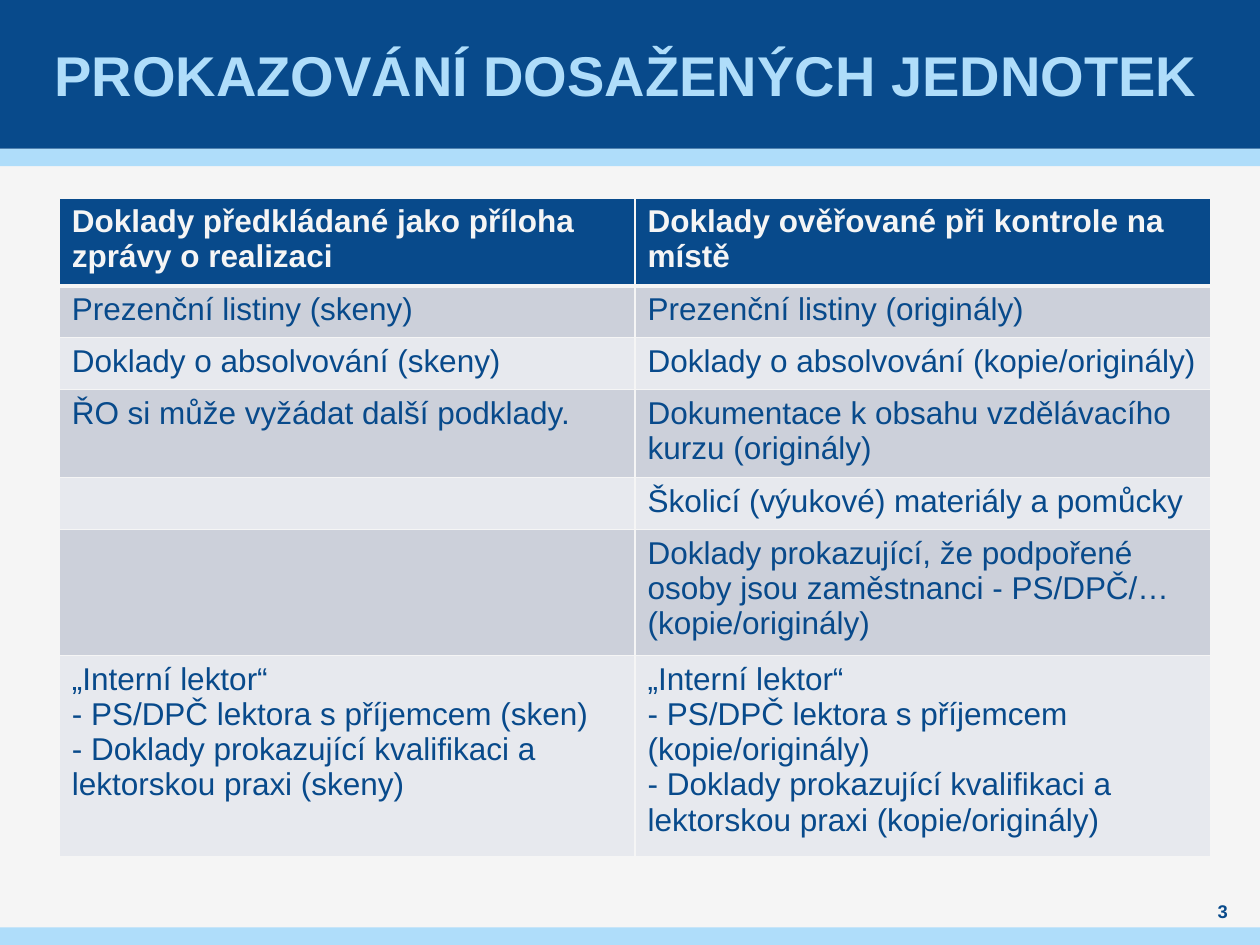
from lxml.etree import SubElement
from pptx import Presentation
from pptx.dml.color import RGBColor
from pptx.enum.shapes import MSO_SHAPE
from pptx.enum.text import MSO_ANCHOR, PP_ALIGN
from pptx.oxml.ns import qn
from pptx.util import Inches, Pt

NAVY = RGBColor(0x08, 0x4A, 0x8B)
SKY = RGBColor(0xAF, 0xDD, 0xFA)
PAPER = RGBColor(0xF5, 0xF5, 0xF5)
BANDS = [RGBColor(0xE7, 0xE9, 0xEE), RGBColor(0xCC, 0xD0, 0xDA)]
FONT = "Arial"

TITLE = "PROKAZOVÁNÍ DOSAŽENÝCH JEDNOTEK"
PAGE = "3"
ROWS = [
    ("Doklady předkládané jako příloha zprávy o realizaci",
     "Doklady ověřované při kontrole na místě"),
    ("Prezenční listiny (skeny)", "Prezenční listiny (originály)"),
    ("Doklady o absolvování (skeny)", "Doklady o absolvování (kopie/originály)"),
    ("ŘO si může vyžádat další podklady.",
     "Dokumentace k obsahu vzdělávacího kurzu (originály)"),
    ("", "Školicí (výukové) materiály a pomůcky"),
    ("", "Doklady prokazující, že podpořené osoby jsou zaměstnanci - PS/DPČ/…\n"
         "(kopie/originály)"),
    ("„Interní lektor“\n"
     "- PS/DPČ lektora s příjemcem (sken)\n"
     "- Doklady prokazující kvalifikaci a lektorskou praxi (skeny)",
     "„Interní lektor“\n"
     "- PS/DPČ lektora s příjemcem (kopie/originály)\n"
     "- Doklady prokazující kvalifikaci a lektorskou praxi (kopie/originály)"),
]
BARS = [(1.18, 0.14, SKY), (0, 1.18, NAVY), (7.36, 0.14, SKY)]
COL_W, ROW_H = 4.57, 0.41


def style_text(tf, size, color, bold):
    for p in tf.paragraphs:
        for r in p.runs:
            r.font.name = FONT
            r.font.size = Pt(size)
            r.font.bold = bold
            r.font.color.rgb = color


def add_text(s, box, text, size, color, align, inset=0):
    tf = s.shapes.add_textbox(*map(Inches, box)).text_frame
    tf.word_wrap = True
    tf.vertical_anchor = MSO_ANCHOR.MIDDLE
    tf.margin_left = tf.margin_right = Inches(inset)
    tf.margin_top = tf.margin_bottom = 0
    tf.text = text
    tf.paragraphs[0].alignment = align
    style_text(tf, size, color, True)


def add_borders(cell, top, bottom):
    tcPr = cell._tc.get_or_add_tcPr()
    for side, width in (("L", 1), ("R", 1), ("T", top), ("B", bottom)):
        ln = SubElement(tcPr, qn(f"a:ln{side}"), w=str(Pt(width)))
        fill = SubElement(ln, qn("a:solidFill"))
        SubElement(fill, qn("a:srgbClr"), val=str(PAPER))


prs = Presentation()
prs.slide_width, prs.slide_height = Inches(10), Inches(7.5)
s = prs.slides.add_slide(prs.slide_layouts[6])
s.background.fill.solid()
s.background.fill.fore_color.rgb = PAPER

for top, height, color in BARS:
    sp = s.shapes.add_shape(MSO_SHAPE.RECTANGLE, 0, Inches(top), Inches(10), Inches(height))
    sp.shadow.inherit = False
    sp.fill.solid()
    sp.fill.fore_color.rgb = color
    sp.line.fill.background()

add_text(s, (0.39, 0, 9.21, 1.18), TITLE, 32, SKY, PP_ALIGN.LEFT, 0.04)

table = s.shapes.add_table(len(ROWS), 2, Inches(0.47), Inches(1.57),
                           Inches(2 * COL_W), Inches(len(ROWS) * ROW_H)).table
for i, row in enumerate(ROWS):
    header = i == 0
    for j, text in enumerate(row):
        cell = table.cell(i, j)
        cell.text = text
        style_text(cell.text_frame, 18, PAPER if header else NAVY, header)
        add_borders(cell, 3 if i == 1 else 1, 3 if header else 1)
        cell.fill.solid()
        cell.fill.fore_color.rgb = NAVY if header else BANDS[i % 2]

add_text(s, (9.45, 7.13, 0.51, 0.2), PAGE, 10.5, NAVY, PP_ALIGN.CENTER)

prs.save("out.pptx")
